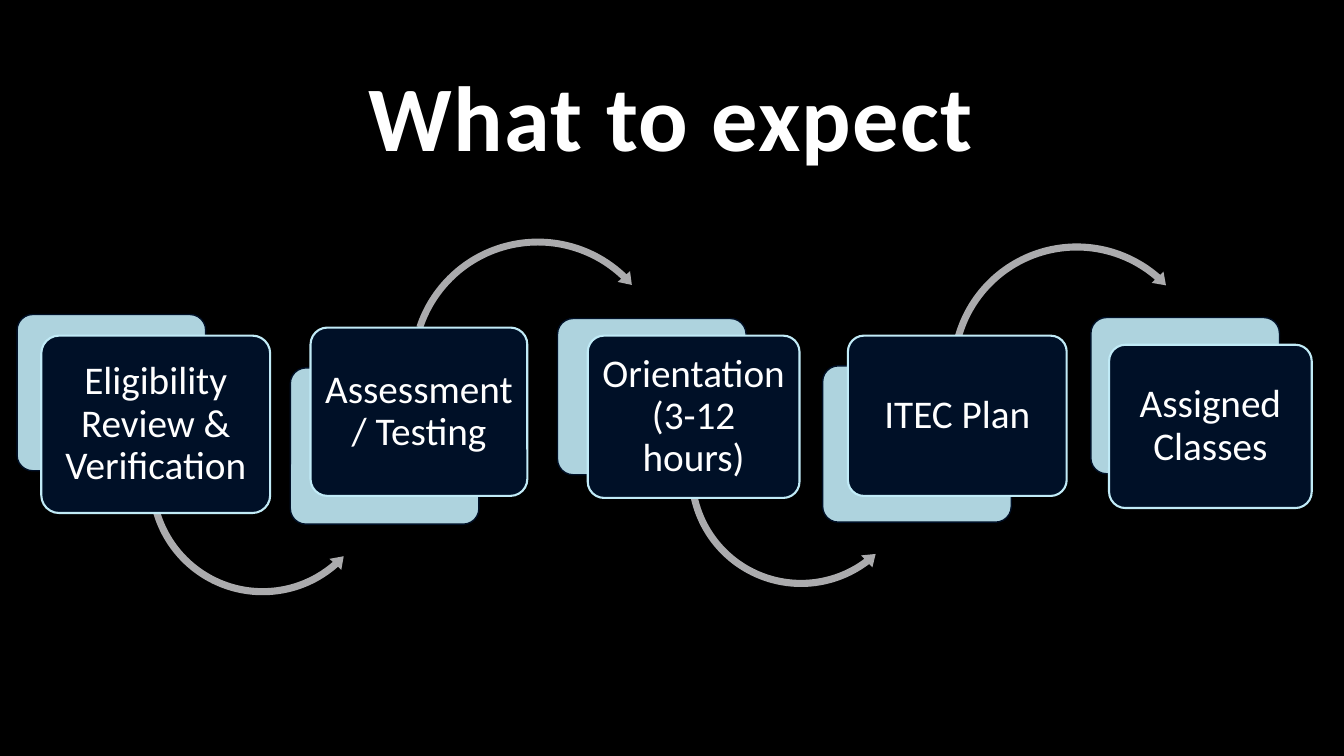
"""Builds the "What to expect" slide: five steps joined by curved arrows."""
from pptx import Presentation
from pptx.dml.color import RGBColor
from pptx.enum.shapes import MSO_SHAPE
from pptx.enum.text import MSO_ANCHOR, PP_ALIGN
from pptx.oxml import parse_xml
from pptx.oxml.ns import nsdecls
from pptx.util import Inches, Pt

COLUMNS, ROWS = 1333, 750
CELL = Inches(13.33) // COLUMNS

HEADING = "What to expect"
HEADING_BOX = (166, 25, 1000, 150)
PANEL_SIZE = (187, 155)
STEPS = [
    {"label": "Eligibility Review & Verification", "panel": (17, 312), "card": (41, 333, 227, 176)},
    {"label": "Assessment/ Testing", "panel": (288, 365), "card": (308, 325, 215, 167)},
    {"label": "Orientation (3-12 hours)", "panel": (553, 316), "card": (583, 333, 210, 161)},
    {"label": "ITEC Plan", "panel": (816, 363), "card": (841, 333, 217, 159)},
    {"label": "Assigned Classes", "panel": (1082, 315), "card": (1100, 342, 201, 162)},
]
ARROWS = [
    {"corner": (143, 360), "side": 235, "bend": (0.03, 3.616, 29.26, 98.134, 0.034)},
    {"corner": (402, 232), "side": 263, "bend": (0.026, 3.205, 188.25, 118.965, 0.031)},
    {"corner": (678, 354), "side": 233, "bend": (0.03, 3.646, 31.784, 100.627, 0.035)},
    {"corner": (938, 237), "side": 260, "bend": (0.027, 3.25, 186.671, 117.431, 0.031)},
]
ARROW_KINDS = (MSO_SHAPE.LEFT_CIRCULAR_ARROW, MSO_SHAPE.CIRCULAR_ARROW)
BLACK, WHITE, NAVY, ICE, GREY = "000000", "FFFFFF", "001027", "C1EBF7", "ABABAD"
HEADING_FONT = {"name": "Calibri", "size": Pt(66), "bold": True}
LABEL_FONT = {"name": "Calibri", "size": Pt(28), "bold": False}
HEADING_FRAME = {"word_wrap": True, "vertical_anchor": MSO_ANCHOR.BOTTOM}
LABEL_FRAME = {
    "word_wrap": True, "vertical_anchor": MSO_ANCHOR.MIDDLE,
    "margin_left": Inches(0.06), "margin_right": Inches(0.06),
    "margin_top": Inches(0.04), "margin_bottom": Inches(0.04),
}
CENTRED = {"alignment": PP_ALIGN.CENTER, "line_spacing": 0.9}


def paint(fill, colour):
    fill.solid()
    fill.fore_color.rgb = RGBColor.from_string(colour)


def apply(target, values):
    for key, value in values.items():
        setattr(target, key, value)


def on_grid(box):
    return [cells * CELL for cells in box]


def write(holder, words, frame_format, font_format):
    frame = holder.text_frame
    apply(frame, frame_format)
    paragraph = frame.paragraphs[0]
    apply(paragraph, CENTRED)
    run = paragraph.add_run()
    run.text = words
    apply(run.font, font_format)
    paint(run.font.fill, WHITE)
    return run


def draw(slide, kind, box, bends, colour, edge=None, weight=0):
    shape = slide.shapes.add_shape(kind, *on_grid(box))
    shape.shadow.inherit = False
    for index, bend in enumerate(bends):
        shape.adjustments[index] = bend
    paint(shape.fill, colour)
    if edge:
        paint(shape.line.fill, edge)
        shape.line.width = Pt(weight)
    else:
        shape.line.fill.background()
    return shape


def draw_step(slide, index, step):
    rounded = MSO_SHAPE.ROUNDED_RECTANGLE
    panel = draw(slide, rounded, step["panel"] + PANEL_SIZE, [0.1], ICE, NAVY, 1)
    tint = panel.fill._xPr.solidFill[0]
    tint.append(parse_xml(f'<a:alpha {nsdecls("a")} val="90000"/>'))
    if index < len(ARROWS):
        arrow = ARROWS[index]
        box = arrow["corner"] + (arrow["side"], arrow["side"])
        draw(slide, ARROW_KINDS[index % 2], box, arrow["bend"], GREY)
    card = draw(slide, rounded, step["card"], [0.1], NAVY, ICE, 1.5)
    write(card, step["label"], LABEL_FRAME, LABEL_FONT)


def main():
    deck = Presentation()
    deck.slide_width, deck.slide_height = on_grid((COLUMNS, ROWS))
    slide = deck.slides.add_slide(deck.slide_layouts[6])
    paint(slide.background.fill, BLACK)
    heading = slide.shapes.add_textbox(*on_grid(HEADING_BOX))
    run = write(heading, HEADING, HEADING_FRAME, HEADING_FONT)
    run.font._element.set("spc", "100")
    for index, step in enumerate(STEPS):
        draw_step(slide, index, step)
    deck.save("out.pptx")


if __name__ == "__main__":
    main()
